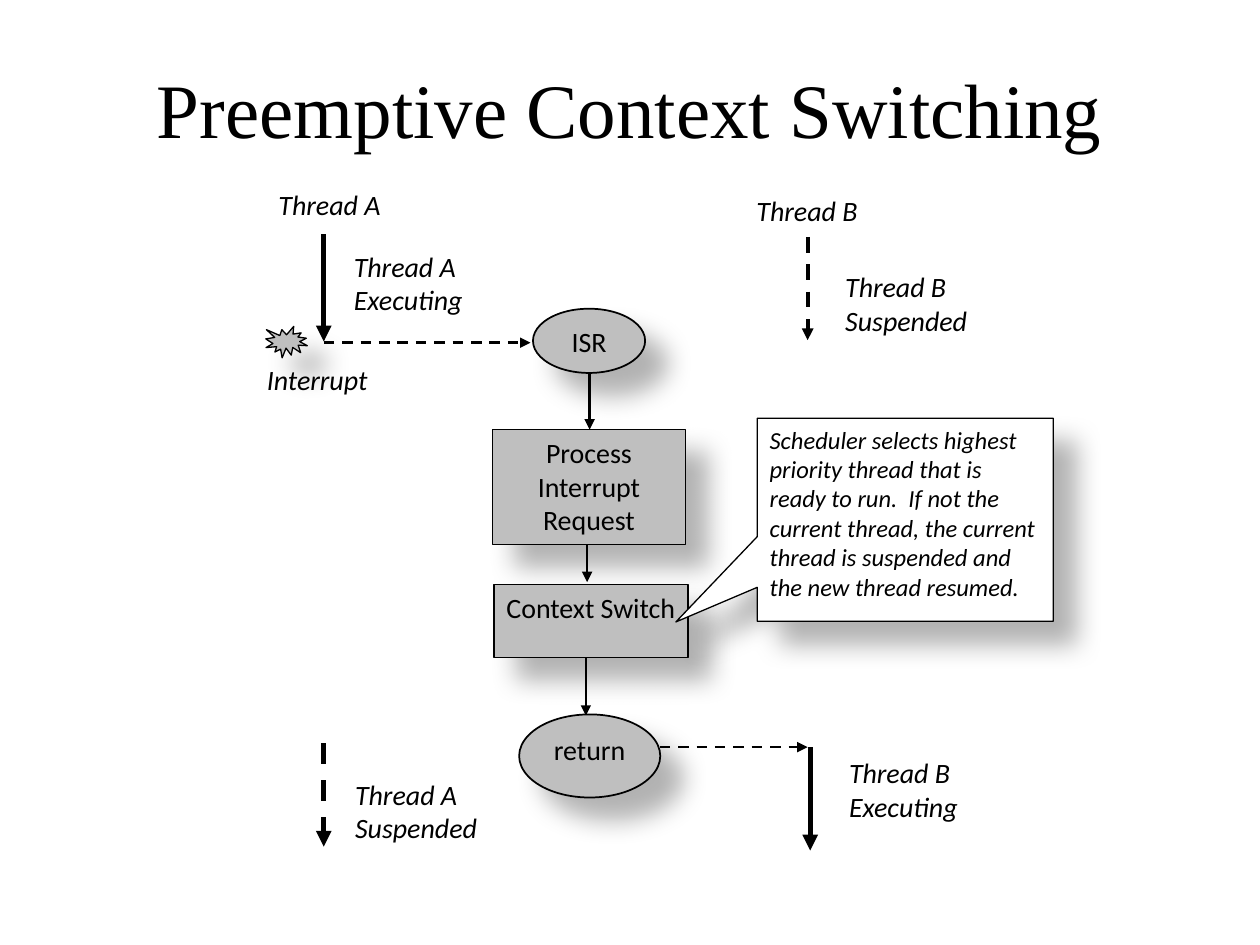
import collections
import lxml.etree
import pptx
import pptx.dml.color
import pptx.enum.dml
import pptx.enum.shapes
import pptx.enum.text
import pptx.oxml
import pptx.oxml.ns
import pptx.util

PX = 9144
SHAPE = pptx.enum.shapes.MSO_SHAPE
ALIGN = pptx.enum.text.PP_ALIGN
ANCHOR = pptx.enum.text.MSO_ANCHOR
Box = collections.namedtuple("Box", "left top width height")


class Theme:
    """Colours, fonts and type sizes of the deck."""
    ink = pptx.dml.color.RGBColor(0, 0, 0)
    grey = pptx.dml.color.RGBColor(0xBF, 0xBF, 0xBF)
    white = pptx.dml.color.RGBColor(255, 255, 255)
    title = {"name": "Times New Roman", "size": pptx.util.Pt(44)}
    node = {"name": "Calibri", "size": pptx.util.Pt(16), "italic": False}
    label = {**node, "italic": True}
    note = {**label, "size": pptx.util.Pt(14)}


def emu(*lengths):
    """Turn px lengths into EMU."""
    return [length * PX for length in lengths]


def within(box, left, top, width, height):
    """Place a box relative to the corner of another."""
    return Box(box.left + left, box.top + top, width, height)


def write(frame, text, style, align, inset=10):
    """Fill a text frame, one paragraph per line of text."""
    margins = {"margin_left": inset * PX, "margin_right": inset * PX}
    for key, value in {"word_wrap": True, "vertical_anchor": ANCHOR.TOP, **margins}.items():
        setattr(frame, key, value)
    for index, line in enumerate(text.split("\n")):
        para = frame.add_paragraph() if index else frame.paragraphs[0]
        para.alignment = align
        span = para.add_run()
        span.text = line
        for key, value in style.items():
            setattr(span.font, key, value)
        span.font.color.rgb = Theme.ink


def add_label(page, box, text, align=ALIGN.LEFT):
    """Add an italic caption."""
    write(page.shapes.add_textbox(*emu(*box)).text_frame, text, Theme.label, align)


def add_arrow(page, box, weight=1.5, dashed=False):
    """Draw an arrow from the top left to the bottom right of a box."""
    ends = box.left, box.top, box.left + box.width, box.top + box.height
    arrow = page.shapes.add_connector(pptx.enum.shapes.MSO_CONNECTOR.STRAIGHT, *emu(*ends))
    arrow.line.color.rgb = Theme.ink
    arrow.line.width = pptx.util.Pt(weight)
    if dashed:
        arrow.line.dash_style = pptx.enum.dml.MSO_LINE.DASH
    head = lxml.etree.SubElement(arrow.line._get_or_add_ln(), pptx.oxml.ns.qn("a:tailEnd"))
    head.set("type", "triangle")
    lxml.etree.SubElement(arrow._element.spPr, pptx.oxml.ns.qn("a:effectLst"))


def add_shadow(shape):
    """Give a shape a soft shadow to the lower right."""
    shape.shadow.inherit = False
    effects = shape._element.spPr.find(pptx.oxml.ns.qn("a:effectLst"))
    effects.append(pptx.oxml.parse_xml(
        f'<a:outerShdw {pptx.oxml.ns.nsdecls("a")} blurRad="190500" dist="228600" '
        'dir="2700000" algn="tl" rotWithShape="0"><a:srgbClr val="000000">'
        '<a:alpha val="30000"/></a:srgbClr></a:outerShdw>'))


def add_block(page, kind, box, fill, weight=0.75):
    """Add an outlined shape with a shadow."""
    block = page.shapes.add_shape(kind, *emu(*box))
    block.fill.solid()
    block.fill.fore_color.rgb = fill
    block.line.color.rgb = Theme.ink
    block.line.width = pptx.util.Pt(weight)
    add_shadow(block)
    return block


def draw_title(page, box, text):
    """Place the slide title."""
    title = page.shapes.title
    for key, value in zip(("left", "top", "width", "height"), emu(*box)):
        setattr(title, key, value)
    write(title.text_frame, text, Theme.title, ALIGN.CENTER)
    title.text_frame.vertical_anchor = ANCHOR.MIDDLE


def draw_thread_state(page, box, text, offset, weight=3, dashed=False):
    """Draw a thread's lifeline along the left of a box, with its state beside it."""
    add_arrow(page, within(box, 0, 0, 0, box.height), weight, dashed)
    add_label(page, within(box, *offset, 134, 48), text)


def draw_interrupt(page, box):
    """Draw the interrupt burst, its caption and the jump to the ISR."""
    add_arrow(page, within(box, 46, 13, 164, 0), dashed=True)
    add_block(page, SHAPE.EXPLOSION1, within(box, 0, 0, 33, 25), Theme.grey)
    add_label(page, within(box, -9, 24, 160, 49), "Interrupt")


def draw_handler_flow(page, box):
    """Draw the steps from the ISR to the return."""
    for left, top, length in ((77, 49, 47), (75, 170, 47), (74, 276, 47)):
        add_arrow(page, within(box, left, top, 0, length))
    add_arrow(page, within(box, 118, 348, 132, 0), dashed=True)
    steps = (
        ("ISR", SHAPE.OVAL, (32, 0, 89, 51), 1),
        ("Process Interrupt Request", SHAPE.RECTANGLE, (0, 96, 153, 91), 0.75),
        ("Context Switch", SHAPE.RECTANGLE, (1, 219, 154, 58), 0.75),
        ("return", SHAPE.OVAL, (21, 322, 112, 66), 1),
    )
    for text, kind, place, weight in steps:
        step = add_block(page, kind, within(box, *place), Theme.grey, weight)
        write(step.text_frame, text, Theme.node, ALIGN.CENTER, inset=8)


def draw_scheduler_note(page, box, text):
    """Draw the callout that points at the context switch."""
    note = add_block(page, SHAPE.RECTANGULAR_CALLOUT, box, Theme.white)
    for index, value in enumerate((-0.775, 0.504)):
        note.adjustments[index] = value
    write(note.text_frame, text, Theme.note, ALIGN.LEFT)


def main():
    """Build and save the deck."""
    deck = pptx.Presentation()
    deck.slide_width, deck.slide_height = emu(1000, 750)
    page = deck.slides.add_slide(deck.slide_layouts[5])
    draw_title(page, Box(75, 23, 850, 125), "Preemptive Context Switching")
    add_label(page, Box(192, 144, 139, 35), "Thread A", ALIGN.CENTER)
    add_label(page, Box(571, 149, 139, 35), "Thread B", ALIGN.CENTER)
    draw_thread_state(page, Box(257, 186, 148, 85), "Thread A\nExecuting", (14, 7))
    draw_thread_state(page, Box(641, 188, 154, 82), "Thread B\nSuspended", (20, 21), 2.25, True)
    draw_thread_state(page, Box(257, 590, 149, 82), "Thread A\nSuspended", (15, 22), dashed=True)
    draw_thread_state(page, Box(643, 593, 155, 82), "Thread B\nExecuting", (21, 2))
    draw_interrupt(page, Box(211, 259, 210, 73))
    draw_handler_flow(page, Box(391, 245, 155, 388))
    draw_scheduler_note(
        page, Box(601, 332, 235, 161),
        "Scheduler selects highest priority thread that is ready to run.  If not the "
        "current thread, the current thread is suspended and the new thread resumed.")
    deck.save("out.pptx")


if __name__ == "__main__":
    main()
